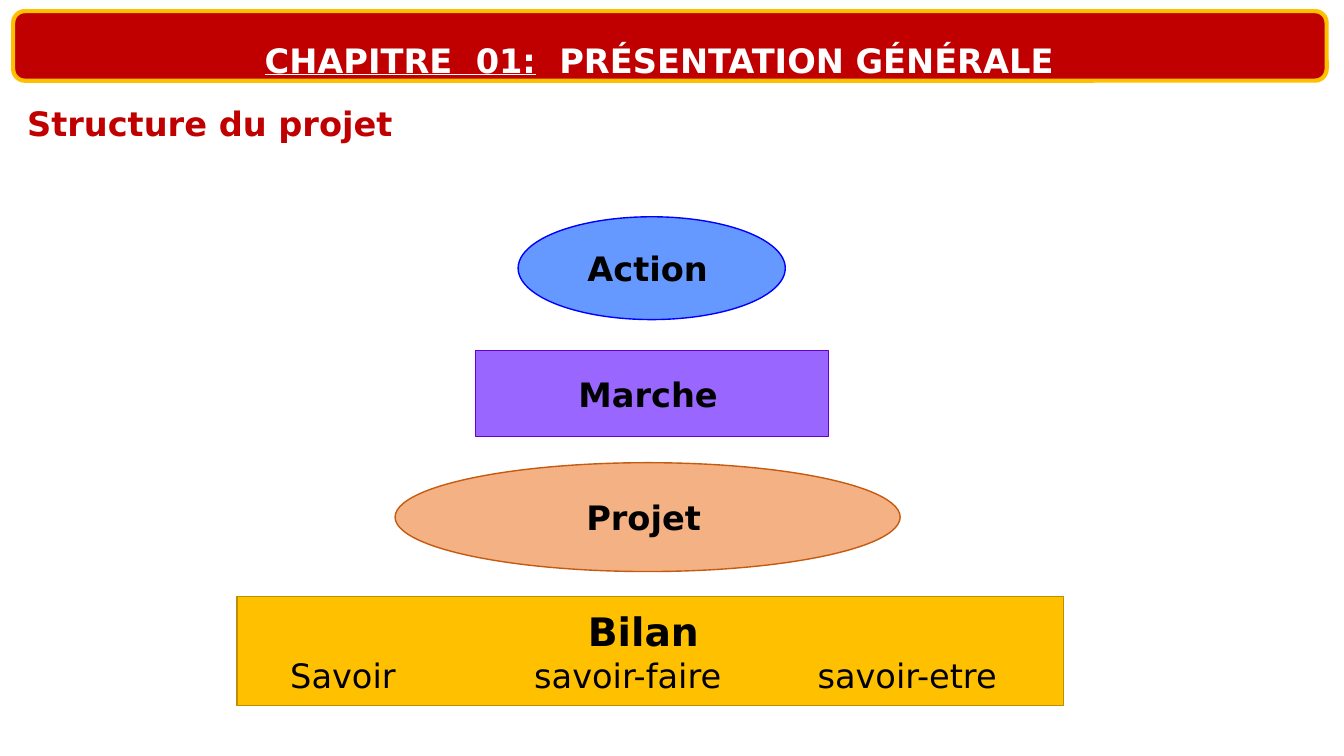
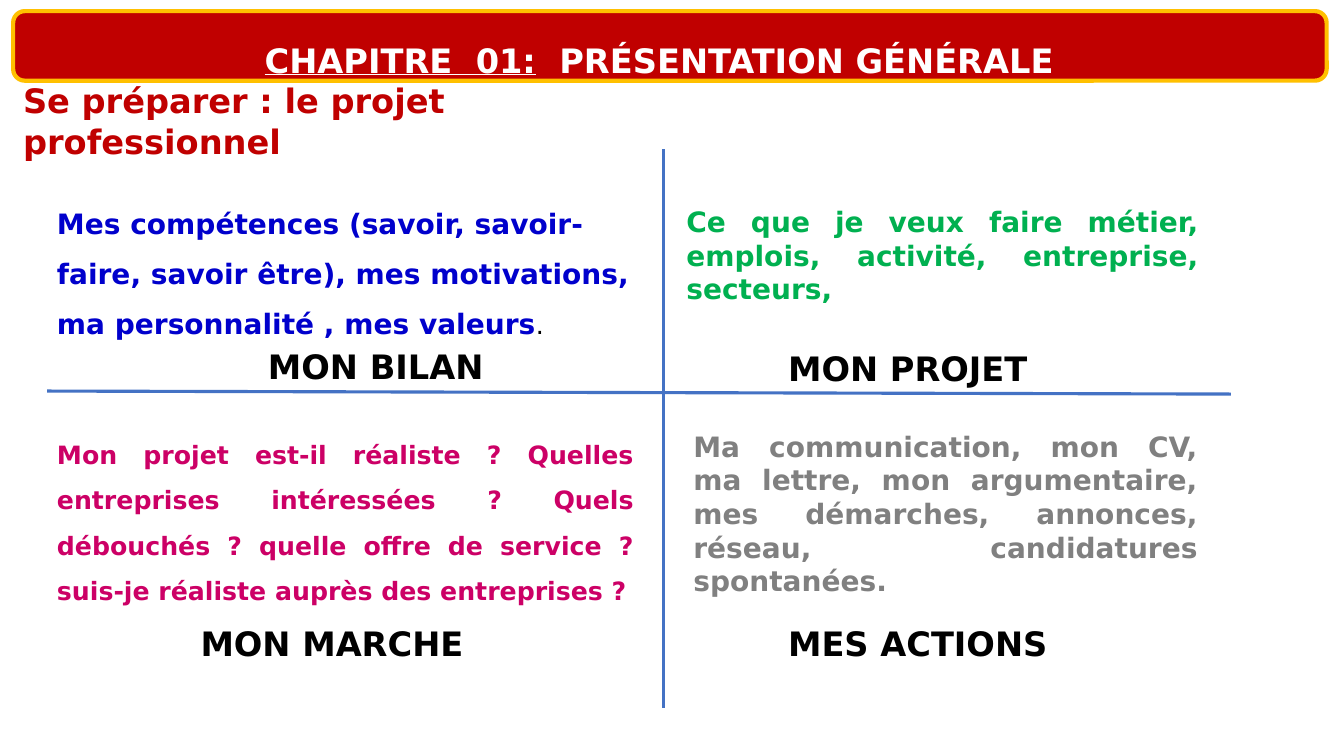
from lxml import etree
from pptx import Presentation
from pptx import util as u
from pptx.dml.color import RGBColor
from pptx.enum import shapes, text
from pptx.oxml.ns import qn

FONT = "DejaVu Sans"
RED = RGBColor(0xC0, 0x00, 0x00)
GOLD = RGBColor(0xFF, 0xC0, 0x00)
DARK_GOLD = RGBColor(0xBD, 0x8E, 0x00)
PEACH = RGBColor(0xF4, 0xB1, 0x83)
RUST = RGBColor(0xC5, 0x5A, 0x11)
LILAC = RGBColor(0x99, 0x66, 0xFF)
PURPLE = RGBColor(0x66, 0x00, 0xCC)
SKY = RGBColor(0x66, 0x99, 0xFF)
BLUE = RGBColor(0x00, 0x00, 0xFF)
AXIS_BLUE = RGBColor(0x44, 0x72, 0xC4)
NAVY = RGBColor(0x00, 0x00, 0xCC)
GREEN = RGBColor(0x00, 0xB0, 0x50)
MAGENTA = RGBColor(0xCC, 0x00, 0x66)
GREY = RGBColor(0x80, 0x80, 0x80)
BLACK = RGBColor(0x00, 0x00, 0x00)
WHITE = RGBColor(0xFF, 0xFF, 0xFF)

LEFT, CENTER, JUSTIFY = (text.PP_ALIGN.LEFT, text.PP_ALIGN.CENTER,
                         text.PP_ALIGN.JUSTIFY)
TOP, MIDDLE = text.MSO_ANCHOR.TOP, text.MSO_ANCHOR.MIDDLE
KIND = shapes.MSO_SHAPE

presentation = Presentation()
presentation.slide_width = u.Inches(13.33)
presentation.slide_height = u.Inches(7.5)


def to_length(x, y):
    """Turn percentages of the slide's width and height into lengths."""
    return (int(presentation.slide_width * x / 100),
            int(presentation.slide_height * y / 100))


def add_block(slide, box, paragraphs, kind=None, fill=None, line=None,
              line_width=1, anchor=TOP, wrap=True, spacing=None):
    """Add a text box or filled shape; paragraphs hold (alignment, runs),
    and each run is (wording, size, colour, bold, underline)."""
    bounds = to_length(*box[:2]) + to_length(*box[2:])
    if kind is None:
        shape = slide.shapes.add_textbox(*bounds)
    else:
        shape = slide.shapes.add_shape(kind, *bounds)
        shape.shadow.inherit = False
        shape.fill.solid()
        shape.fill.fore_color.rgb = fill
        shape.line.color.rgb = line
        shape.line.width = u.Pt(line_width)
    frame = shape.text_frame
    frame.word_wrap = wrap
    frame.vertical_anchor = anchor
    for index, (alignment, runs) in enumerate(paragraphs):
        paragraph = frame.add_paragraph() if index else frame.paragraphs[0]
        paragraph.alignment = alignment
        if spacing:
            paragraph.line_spacing = spacing
        for wording, size, colour, bold, underline in runs:
            run = paragraph.add_run()
            run.text = wording
            run.font.name = FONT
            run.font.size = u.Pt(size)
            run.font.color.rgb = colour
            run.font.bold = bold
            run.font.underline = underline
    return shape


# Shared header band and subtitle
header = [(CENTER, [("CHAPITRE  01:", 24, WHITE, True, True),
                    ("  PRÉSENTATION GÉNÉRALE ", 24, WHITE, True, False),
                    (" ", 20, WHITE, True, False)])]
subtitles = [
    ("Structure du projet", (1.28, 10.67, 34.05, 11.33)),
    ("Se préparer : le projet professionnel", (0.98, 10.27, 52.65, 11.33)),
]
for subtitle, box in subtitles:
    slide = presentation.slides.add_slide(presentation.slide_layouts[6])
    add_block(slide, (0.98, 1.47, 97.73, 9.2), header,
              KIND.FLOWCHART_ALTERNATE_PROCESS, RED, GOLD, 3, spacing=1.5)
    add_block(slide, box, [(LEFT, [(subtitle, 24, RED, True, False)])],
              anchor=MIDDLE, wrap=False)
structure_slide, project_slide = presentation.slides

# Structure: the base, with three columns set by tab stops
base = add_block(
    structure_slide, (17.63, 78.93, 61.5, 14.4),
    [(CENTER, [("Bilan ", 28, BLACK, True, False)]),
     (LEFT, [("\tSavoir\tsavoir-faire\tsavoir-etre", 24, BLACK, False, False)])],
    KIND.RECTANGLE, GOLD, DARK_GOLD, anchor=MIDDLE)
properties = base.text_frame.paragraphs[1]._p.get_or_add_pPr()
tab_list = etree.SubElement(properties, qn("a:tabLst"))
for position in (0.43, 2.85, 5.66):
    etree.SubElement(tab_list, qn("a:tab"), pos=str(u.Inches(position)), algn="l")

# Structure: the levels above the base
levels = [
    ("Projet", KIND.OVAL, (29.4, 61.2, 37.58, 14.4), PEACH, RUST),
    ("Marche", KIND.RECTANGLE, (35.4, 46.4, 26.25, 11.33), LILAC, PURPLE),
    ("Action", KIND.OVAL, (38.55, 28.67, 19.88, 13.6), SKY, BLUE),
]
for name, kind, box, fill, line in levels:
    runs = [(name, 24, BLACK, True, False), (" ", 18, BLACK, False, False)]
    add_block(structure_slide, box, [(CENTER, runs)], kind, fill, line,
              anchor=MIDDLE)

# Project: the cross that parts the four quadrants
for start, end in [((49.35, 19.73), (49.35, 93.6)),
                   ((3.5, 51.73), (91.58, 52.13))]:
    axis = project_slide.shapes.add_connector(
        shapes.MSO_CONNECTOR.STRAIGHT, *to_length(*start), *to_length(*end))
    axis.line.color.rgb = AXIS_BLUE
    axis.line.width = u.Pt(2.25)
    etree.SubElement(axis._element.spPr, qn("a:effectLst"))

# Project: what each quadrant says
skills = add_block(
    project_slide, (3.5, 24.4, 45.9, 20.67),
    [(LEFT, [("Mes compétences (savoir, savoir-faire, savoir être), mes "
              "motivations, ma personnalité , mes valeurs", 20, NAVY, True, False),
             (".", 18, BLACK, False, False)])], spacing=1.5)
skills.text_frame.paragraphs[0].space_before = u.Pt(3)
skills.text_frame.paragraphs[0].space_after = u.Pt(3)

quadrants = [
    ("Ce que je veux faire métier, emplois, activité, entreprise, secteurs,",
     (50.33, 26.4, 39.6, 14.8), 20, GREEN, None),
    ("Mon projet est-il réaliste ? Quelles entreprises intéressées ? Quels "
     "débouchés ? quelle offre de service ? suis-je réaliste auprès des "
     "entreprises ?", (3.5, 55.47, 44.4, 24.8), 18, MAGENTA, 1.5),
    ("Ma communication, mon CV, ma lettre, mon argumentaire, mes démarches, "
     "annonces, réseau, candidatures spontanées.",
     (50.85, 56.13, 39, 19.33), 20, GREY, None),
]
for wording, box, size, colour, spacing in quadrants:
    add_block(project_slide, box,
              [(JUSTIFY, [(wording, size, colour, True, False)])],
              spacing=spacing)

# Project: the quadrant names
for name, x, y in [("MON BILAN", 19.2, 45.07), ("MON PROJET", 57.9, 45.33),
                   ("MON MARCHE", 14.18, 81.73), ("MES ACTIONS", 57.9, 81.73)]:
    add_block(project_slide, (x, y, 22.65, 6.67),
              [(JUSTIFY, [(name, 24, BLACK, True, False)])])

presentation.save("out.pptx")
